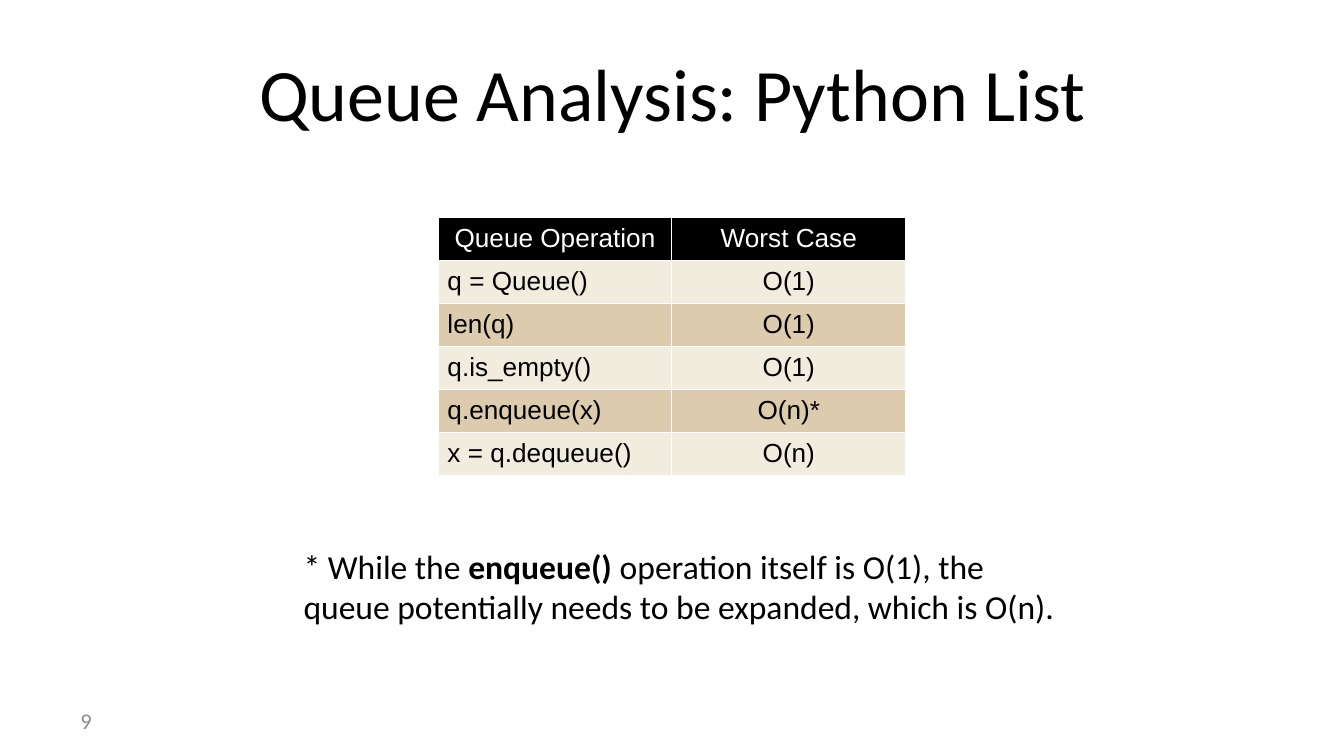
from typing import NamedTuple

from lxml import etree
from pptx import Presentation
from pptx.dml.color import RGBColor
from pptx.enum.text import MSO_ANCHOR, PP_ALIGN
from pptx.oxml.ns import qn
from pptx.util import Inches, Pt

CENTER, LEFT = PP_ALIGN.CENTER, PP_ALIGN.LEFT
MIDDLE, TOP = MSO_ANCHOR.MIDDLE, MSO_ANCHOR.TOP

BLACK, WHITE, GRAY = "000000", "FFFFFF", "8C8C8C"
BANDS = ("F2ECDE", "DCCBAC")
SLIDE_WIDTH = 10
SLIDE_HEIGHT = SLIDE_WIDTH * 9 / 16
COLUMN_WIDTH, ROW_HEIGHT = 1.74, 0.32


class Operation(NamedTuple):
    call: str
    worst_case: str


class Run(NamedTuple):
    text: str
    bold: bool = False


HEADER = Operation("Queue Operation", "Worst Case")
OPERATIONS = [
    Operation("q = Queue()", "O(1)"),
    Operation("len(q)", "O(1)"),
    Operation("q.is_empty()", "O(1)"),
    Operation("q.enqueue(x)", "O(n)*"),
    Operation("x = q.dequeue()", "O(n)"),
]
FOOTNOTE = [
    Run("* While the "),
    Run("enqueue()", bold=True),
    Run(" operation itself is O(1), the queue potentially needs to be expanded, which is O(n)."),
]


def color(value: str) -> RGBColor:
    return RGBColor.from_string(value)


def format_font(font, name: str, size: float, value: str, bold: bool = False) -> None:
    font.name, font.size, font.bold = name, Pt(size), bold
    font.color.rgb = color(value)


def set_margins(target, left: float, top: float, right: float, bottom: float) -> None:
    target.margin_left, target.margin_top = Inches(left), Inches(top)
    target.margin_right, target.margin_bottom = Inches(right), Inches(bottom)


def add_title(slide, text: str) -> None:
    title = slide.shapes.title
    title.left, title.top = Inches(1.62), Inches(0.22)
    title.width, title.height = Inches(6.77), Inches(0.94)
    frame = title.text_frame
    frame.text = text
    frame.vertical_anchor = MIDDLE
    set_margins(frame, 0.07, 0.03, 0.07, 0.04)
    paragraph = frame.paragraphs[0]
    paragraph.alignment = CENTER
    format_font(paragraph.runs[0].font, "Calibri", 39.6, BLACK)


def add_text(slide, left: float, top: float, width: float, height: float,
             runs: list[Run], size: float, value: str, anchor=TOP) -> None:
    box = slide.shapes.add_textbox(Inches(left), Inches(top), Inches(width), Inches(height))
    frame = box.text_frame
    frame.word_wrap = True
    frame.vertical_anchor = anchor
    for part in runs:
        run = frame.paragraphs[0].add_run()
        run.text = part.text
        format_font(run.font, "Calibri", size, value, part.bold)


def add_borders(cell, value: str, width: float) -> None:
    properties = cell._tc.get_or_add_tcPr()
    for index, side in enumerate(("a:lnL", "a:lnR", "a:lnT", "a:lnB")):
        line = etree.Element(qn(side), w=str(Pt(width)))
        fill = etree.SubElement(line, qn("a:solidFill"))
        etree.SubElement(fill, qn("a:srgbClr"), val=value)
        properties.insert(index, line)


def format_cell(cell, text: str, fill: str, text_color: str, alignment) -> None:
    cell.text = text
    cell.vertical_anchor = MIDDLE
    set_margins(cell, 0.07, 0.05, 0.07, 0.05)
    cell.fill.solid()
    cell.fill.fore_color.rgb = color(fill)
    add_borders(cell, WHITE, 0.57)
    paragraph = cell.text_frame.paragraphs[0]
    paragraph.alignment = alignment
    paragraph.line_spacing = 0.93
    format_font(paragraph.runs[0].font, "Arial", 14, text_color)


def add_operation_table(slide, left: float, top: float) -> None:
    rows = [HEADER, *OPERATIONS]
    column_count = len(HEADER)
    table = slide.shapes.add_table(
        len(rows), column_count, Inches(left), Inches(top),
        Inches(COLUMN_WIDTH * column_count), Inches(ROW_HEIGHT * len(rows))).table
    for column in table.columns:
        column.width = Inches(COLUMN_WIDTH)
    for row_index, operation in enumerate(rows):
        table.rows[row_index].height = Inches(ROW_HEIGHT)
        is_header = row_index == 0
        fill = BLACK if is_header else BANDS[(row_index - 1) % 2]
        for column_index, text in enumerate(operation):
            alignment = CENTER if is_header or column_index else LEFT
            format_cell(table.cell(row_index, column_index), text, fill,
                        WHITE if is_header else BLACK, alignment)


def main() -> None:
    presentation = Presentation()
    presentation.slide_width = Inches(SLIDE_WIDTH)
    presentation.slide_height = Inches(SLIDE_HEIGHT)
    slide = presentation.slides.add_slide(presentation.slide_layouts[5])

    # Slide number and title
    add_text(slide, 0.5, 5.21, 2.33, 0.3, [Run("9")], 12, GRAY, MIDDLE)
    add_title(slide, "Queue Analysis: Python List")

    # Complexity table and its footnote
    add_operation_table(slide, 3.26, 1.62)
    add_text(slide, 2.16, 4.01, 5.85, 0.71, FOOTNOTE, 18, BLACK)

    presentation.save("out.pptx")


if __name__ == "__main__":
    main()
